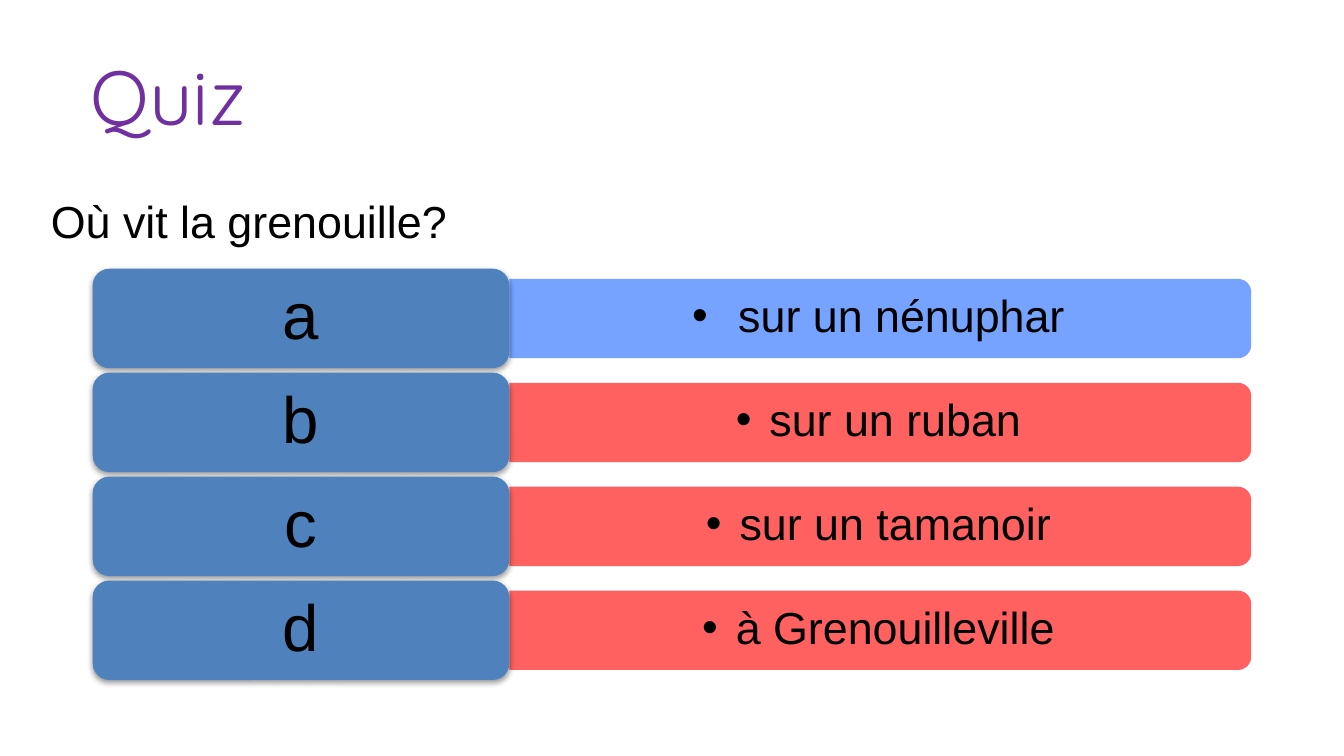
from dataclasses import dataclass
from lxml import etree
from pptx import Presentation
from pptx.dml.color import RGBColor as RGB
from pptx.enum.shapes import MSO_SHAPE as Shape
from pptx.enum.text import MSO_ANCHOR as Anchor, PP_ALIGN as Align
from pptx.oxml import parse_xml
from pptx.oxml.ns import nsdecls, qn
from pptx.util import Inches, Pt


@dataclass
class Theme:
    head: str = "7030A0"
    ink: str = "000000"
    tab: str = "4F81BD"
    right: str = "6699FF"
    wrong: str = "FF5050"
    face: str = "Quicksand"
    body: str = "Arial"
    big: int = 41
    mid: int = 35
    small: int = 24


def write(shape, text, size, font, color, pads, anchor, para):
    frame = shape.text_frame
    side, edge = Inches(pads[0]), Inches(pads[1])
    form = {
        "word_wrap": True, "vertical_anchor": anchor,
        "margin_left": side, "margin_right": side,
        "margin_top": edge, "margin_bottom": edge,
    }
    line = frame.paragraphs[0]
    run = line.add_run()
    run.text = text
    look = {"size": Pt(size), "name": font}
    for item, values in ((frame, form), (line, para), (run.font, look)):
        for key, value in values.items():
            setattr(item, key, value)
    run.font.color.rgb = RGB.from_string(color)
    return line


def block(kind, box, color):
    shape = slide.shapes.add_shape(kind, *map(Inches, box))
    shape.shadow.inherit = False
    shape.fill.solid()
    shape.fill.fore_color.rgb = RGB.from_string(color)
    shape.line.fill.background()
    return shape


theme = Theme()
deck = Presentation()
deck.slide_width, deck.slide_height = Inches(10), Inches(10 * 9 / 16)
slide = deck.slides.add_slide(deck.slide_layouts[6])

title = slide.shapes.add_textbox(*map(Inches, (0.67, 0.16, 8.62, 1.09)))
write(title, "Quiz", theme.big, theme.face, theme.head, (0, 0),
      Anchor.MIDDLE, {"alignment": Align.LEFT})

center = {"alignment": Align.CENTER, "line_spacing": 0.9}
thick, length = 0.59, 5.52
left, wide, tall = 0.69, 3.1, 0.74
rows = [
    ("a", " sur un nénuphar", theme.right),
    ("b", "sur un ruban", theme.wrong),
    ("c", "sur un tamanoir", theme.wrong),
    ("d", "à Grenouilleville", theme.wrong),
]
first, last = 2, 4.32
step = (last - first) / (len(rows) - 1)

for i, (letter, reply, color) in enumerate(rows):
    top = first + i * step
    mid = top + tall / 2
    edge = left + wide

    bar = block(Shape.ROUND_2_SAME_RECTANGLE,
                (edge + (length - thick) / 2, mid - length / 2, thick, length),
                color)
    bar.rotation = 90
    tint = bar.fill._xPr.find(qn("a:solidFill"))[0]
    etree.SubElement(tint, qn("a:alpha"), val="90000")

    label = slide.shapes.add_textbox(
        *map(Inches, (edge, mid - 0.27, 5.49, 0.53)))
    line = write(label, reply, theme.small, theme.body, theme.ink,
                 (0.27, 0.14), Anchor.MIDDLE, center)
    line.level = 1
    props = line._p.get_or_add_pPr()
    props.set("marL", str(Inches(0.25)))
    props.set("indent", str(-Inches(0.25)))
    etree.SubElement(props, qn("a:buFont"), typeface=theme.body)
    etree.SubElement(props, qn("a:buChar"), char="•")

    tab = block(Shape.ROUNDED_RECTANGLE, (left, top, wide, tall), theme.tab)
    glow = tab._element.spPr.find(qn("a:effectLst"))
    glow.append(parse_xml(
        f'<a:outerShdw {nsdecls("a")} blurRad="{Pt(3.1)}" dist="{Pt(1.6)}" '
        f'dir="5400000" rotWithShape="0"><a:srgbClr val="{theme.ink}">'
        '<a:alpha val="38000"/></a:srgbClr></a:outerShdw>'))
    write(tab, letter, theme.mid, theme.body, theme.ink,
          (0.15, 0.07), Anchor.MIDDLE, center)

query = slide.shapes.add_textbox(*map(Inches, (0.28, 1.39, 8.98, 0.5)))
write(query, "Où vit la grenouille?", theme.small, theme.body, theme.ink,
      (0.1, 0.05), Anchor.TOP, {"alignment": Align.LEFT})

deck.save("out.pptx")
